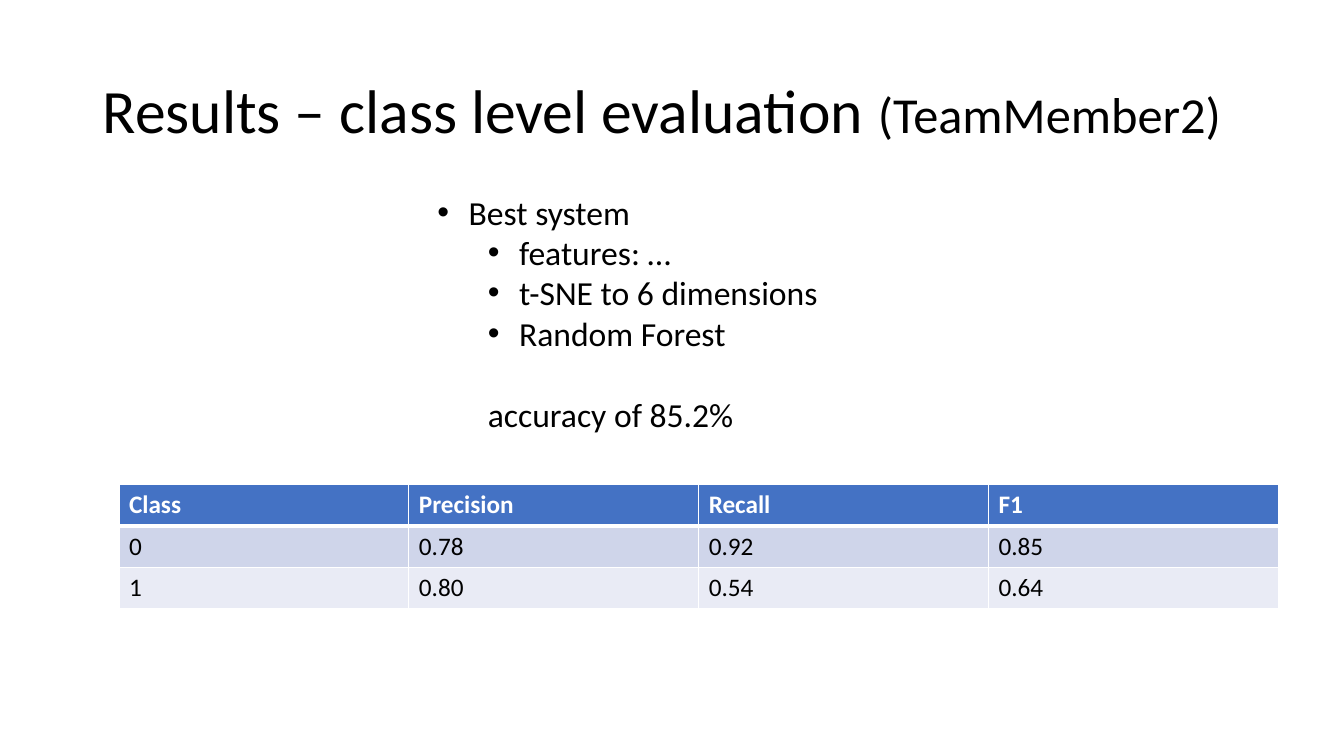
from lxml import etree
from pptx import Presentation
from pptx import util as u
from pptx.dml.color import RGBColor
from pptx.enum import text
from pptx.oxml import ns

BLACK, WHITE = "000000", "FFFFFF"
HEADER_FILL, BAND_FILLS = "4472C4", ("CFD5EA", "E9EBF5")

SCORES = [
    ("Class", "Precision", "Recall", "F1"),
    ("0", "0.78", "0.92", "0.85"),
    ("1", "0.80", "0.54", "0.64"),
]

# text, left margin, hanging indent, space before in points
BEST_SYSTEM = [
    ("Best system", 0.31, 0.31, 0),
    ("features: …", 0.81, 0.31, 0),
    ("t-SNE to 6 dimensions", 0.81, 0.31, 0),
    ("Random Forest", 0.81, 0.31, 0),
    ("accuracy of 85.2%", 0.5, 0, 29.3),
]


def color(value):
    return RGBColor.from_string(value)


class SlideBuilder:
    def __init__(self, slide, font="Calibri"):
        self.slide = slide
        self.font = font

    def add_span(self, para, words, size, ink=BLACK, bold=False):
        span = para.add_run()
        span.text = words
        span.font.name = self.font
        span.font.size = u.Pt(size)
        span.font.bold = bold
        span.font.color.rgb = color(ink)

    def add_box(self, left, top, width, height, anchor):
        box = self.slide.shapes.add_textbox(*map(u.Inches, (left, top, width, height)))
        frame = box.text_frame
        frame.word_wrap = True
        frame.vertical_anchor = anchor
        return frame

    def add_title(self, spans, *place):
        para = self.add_box(*place, text.MSO_ANCHOR.MIDDLE).paragraphs[0]
        para.line_spacing = 0.9
        for words, size in spans:
            self.add_span(para, words, size)

    def add_list(self, items, *place, size=24):
        frame = self.add_box(*place, text.MSO_ANCHOR.TOP)
        for index, (words, margin, hanging, before) in enumerate(items):
            para = frame.add_paragraph() if index else frame.paragraphs[0]
            para.space_before = u.Pt(before)
            self.indent(para, margin, hanging)
            self.add_span(para, words, size)

    def indent(self, para, margin, hanging):
        """Set the left margin; a hanging indent also gets a bullet."""
        props = para._p.get_or_add_pPr()
        props.set("marL", str(u.Inches(margin)))
        props.set("indent", str(-u.Inches(hanging)))
        if hanging:
            etree.SubElement(props, ns.qn("a:buFont"), typeface="Arial")
            etree.SubElement(props, ns.qn("a:buChar"), char="•")

    def add_table(self, rows, left, top, width, row_height, size=18):
        """Add a table with a header row and banded body rows."""
        columns = len(rows[0])
        place = map(u.Inches, (left, top, width, row_height * len(rows)))
        table = self.slide.shapes.add_table(len(rows), columns, *place).table
        for r, row in enumerate(rows):
            header = r == 0
            fill = HEADER_FILL if header else BAND_FILLS[(r - 1) % 2]
            for c, words in enumerate(row):
                cell = table.cell(r, c)
                self.border(cell, top=3 if r == 1 else 1, bottom=3 if header else 1)
                cell.fill.solid()
                cell.fill.fore_color.rgb = color(fill)
                self.add_span(cell.text_frame.paragraphs[0], words, size,
                              WHITE if header else BLACK, header)

    def border(self, cell, top, bottom):
        props = cell._tc.get_or_add_tcPr()
        for side, width in (("L", 1), ("R", 1), ("T", top), ("B", bottom)):
            line = etree.SubElement(props, ns.qn(f"a:ln{side}"), w=str(u.Pt(width)))
            fill = etree.SubElement(line, ns.qn("a:solidFill"))
            etree.SubElement(fill, ns.qn("a:srgbClr"), val=WHITE)


def main():
    deck = Presentation()
    deck.slide_width, deck.slide_height = u.Inches(13.33), u.Inches(7.5)
    page = SlideBuilder(deck.slides.add_slide(deck.slide_layouts[6]))
    page.add_title([("Results – class level evaluation ", 44), ("(TeamMember2)", 36)],
                   0.92, 0.4, 11.5, 1.45)
    page.add_table(SCORES, 1.18, 4.81, 11.5, 0.41)
    page.add_list(BEST_SYSTEM, 4.24, 1.85, 4.01, 2.52)
    deck.save("out.pptx")


if __name__ == "__main__":
    main()
